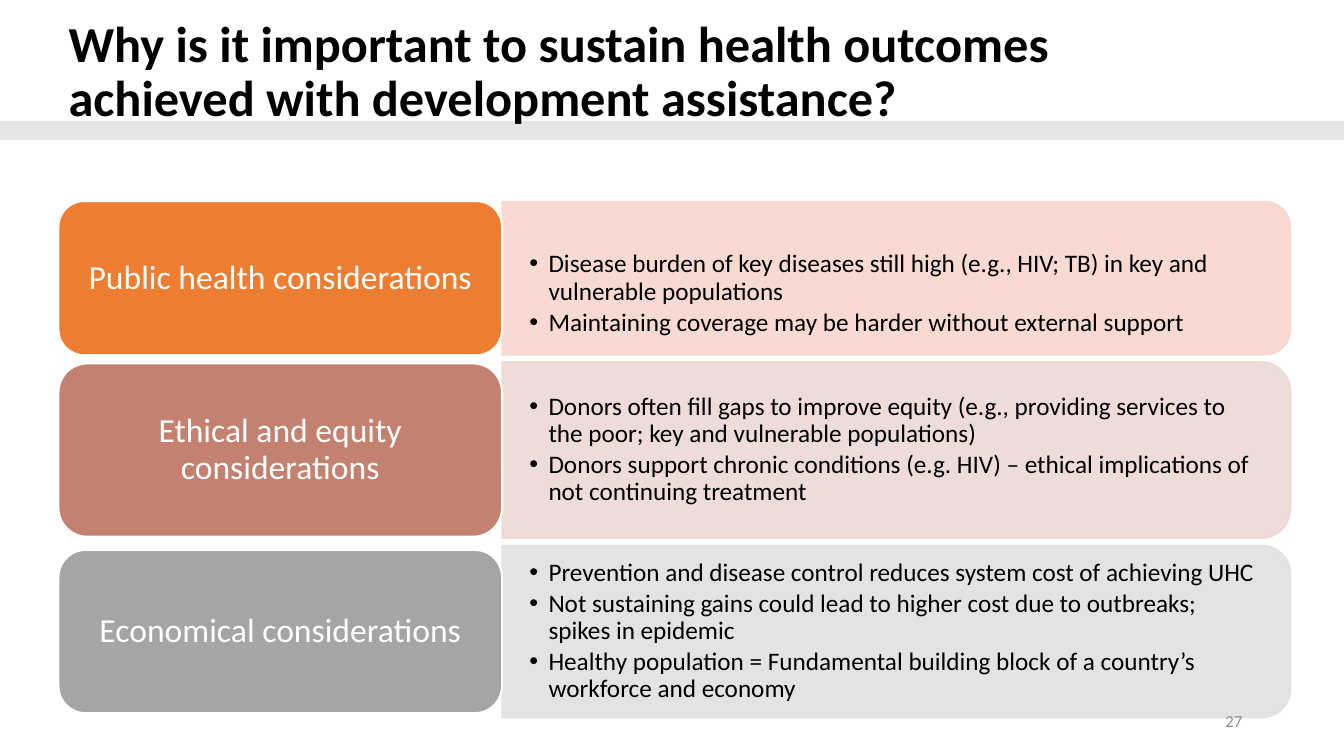
from lxml import etree
from pptx import Presentation
from pptx.dml.color import RGBColor
from pptx.enum.shapes import MSO_SHAPE
from pptx.enum.text import MSO_ANCHOR, MSO_AUTO_SIZE, PP_ALIGN
from pptx.oxml.ns import qn
from pptx.util import Inches, Pt

RECT, LABEL, PANEL = MSO_SHAPE.RECTANGLE, MSO_SHAPE.ROUNDED_RECTANGLE, MSO_SHAPE.ROUND_2_SAME_RECTANGLE
MIDDLE, FIXED = MSO_ANCHOR.MIDDLE, MSO_AUTO_SIZE.NONE
LEFT, CENTER, RIGHT = PP_ALIGN.LEFT, PP_ALIGN.CENTER, PP_ALIGN.RIGHT

THEME = {
    "font": "Calibri", "ink": "000000", "paper": "FFFFFF", "band": "E7E6E6", "muted": "8C8C8C",
    "title": 36, "label": 24, "list": 18, "number": 12,
}
COMPARISON_LAYOUT = 4
FIRST_TOP, ROW_GAP = 2.0, 0.07
LABEL_LEFT, LABEL_WIDTH = 0.58, 4.4
PANEL_LEFT, PANEL_WIDTH = LABEL_LEFT + LABEL_WIDTH, 7.82
LIST_INDENT = Inches(0.19)

considerations = [
    {"label": "Public health considerations", "fill": "ED7D31", "tint": "F8D7CE",
     "height": 1.52, "label_height": 1.53, "drop": 0.31,
     "points": ["Disease burden of key diseases still high (e.g., HIV; TB) in key and vulnerable populations",
                "Maintaining coverage may be harder without external support"]},
    {"label": "Ethical and equity considerations", "fill": "C48170", "tint": "EDD9D7",
     "height": 1.75, "label_height": 1.72, "drop": 0,
     "points": ["Donors often fill gaps to improve equity (e.g., providing services to the poor; key and vulnerable populations)",
                "Donors support chronic conditions (e.g. HIV) – ethical implications of not continuing treatment"]},
    {"label": "Economical considerations", "fill": "A5A5A5", "tint": "E1E1E1",
     "height": 1.71, "label_height": 1.62, "drop": 0,
     "points": ["Prevention and disease control reduces system cost of achieving UHC",
                "Not sustaining gains could lead to higher cost due to outbreaks; spikes in epidemic",
                "Healthy population = Fundamental building block of a country’s workforce and economy"]},
]


def write(holder, lines, size, color, align, bold=False, spacing=0.9, after=0, **frame_format):
    frame = holder.text_frame
    frame.text = "\n".join(lines)
    for name, value in {"word_wrap": True, "auto_size": FIXED, "vertical_anchor": MIDDLE, **frame_format}.items():
        setattr(frame, name, value)
    paragraph_format = {"alignment": align, "line_spacing": spacing, "space_before": Pt(0), "space_after": Pt(after)}
    font_format = {"name": THEME["font"], "size": Pt(THEME[size]), "bold": bold}
    for paragraph in frame.paragraphs:
        for name, value in paragraph_format.items():
            setattr(paragraph, name, value)
        for name, value in font_format.items():
            setattr(paragraph.runs[0].font, name, value)
        paragraph.runs[0].font.color.rgb = RGBColor.from_string(THEME[color])


def block(kind, left, top, width, height, fill, line=None, weight=1):
    shape = slide.shapes.add_shape(kind, Inches(left), Inches(top), Inches(width), Inches(height))
    shape.shadow.inherit = False
    shape.fill.solid()
    shape.fill.fore_color.rgb = RGBColor.from_string(fill)
    if line:
        shape.line.color.rgb = RGBColor.from_string(line)
        shape.line.width = Pt(weight)
    else:
        shape.line.fill.background()
    return shape


prs = Presentation()
prs.slide_width, prs.slide_height = Inches(13.33), Inches(7.5)
slide = prs.slides.add_slide(prs.slide_layouts[COMPARISON_LAYOUT])
title, *lists, spare = slide.placeholders
spare.element.getparent().remove(spare.element)

band = block(RECT, 0, 1.2, 13.33, 0.19, THEME["band"])
title.element.addprevious(band.element)
title.left, title.top, title.width, title.height = Inches(LABEL_LEFT), 0, Inches(11.5), Inches(1.45)
write(title, ["Why is it important to sustain health outcomes achieved with development assistance?"],
      "title", "ink", LEFT, bold=True)

top = FIRST_TOP
for row, points in zip(considerations, lists):
    height, label_height = row["height"], row["label_height"]
    middle = top + height / 2

    panel = block(PANEL, PANEL_LEFT + (PANEL_WIDTH - height) / 2, middle - PANEL_WIDTH / 2,
                  height, PANEL_WIDTH, row["tint"], row["tint"])
    panel.rotation = 90
    for tint in panel.element.spPr.iter(qn("a:srgbClr")):
        etree.SubElement(tint, qn("a:alpha"), val="90000")
    points.element.addprevious(panel.element)

    points.left, points.top = Inches(PANEL_LEFT), Inches(top)
    points.width, points.height = Inches(7.75), Inches(height)
    write(points, row["points"], "list", "ink", LEFT, after=2.7,
          margin_left=Inches(0.27), margin_right=Inches(0.27),
          margin_top=Inches(0.05 + row["drop"]), margin_bottom=Inches(0.05))
    for paragraph in points.text_frame.paragraphs:
        properties = paragraph._p.get_or_add_pPr()
        properties.set("marL", str(LIST_INDENT))
        properties.set("indent", str(-LIST_INDENT))
        etree.SubElement(properties, qn("a:buFont"), typeface="Arial")
        etree.SubElement(properties, qn("a:buChar"), char="•")

    label = block(LABEL, LABEL_LEFT, middle - label_height / 2, LABEL_WIDTH, label_height,
                  row["fill"], THEME["paper"], 1.5)
    write(label, [row["label"]], "label", "paper", CENTER)
    top += height + ROW_GAP

page_number = slide.shapes.add_textbox(Inches(9.42), Inches(6.95), Inches(3), Inches(0.4))
write(page_number, ["27"], "number", "muted", RIGHT, spacing=1.0)

prs.save("out.pptx")
